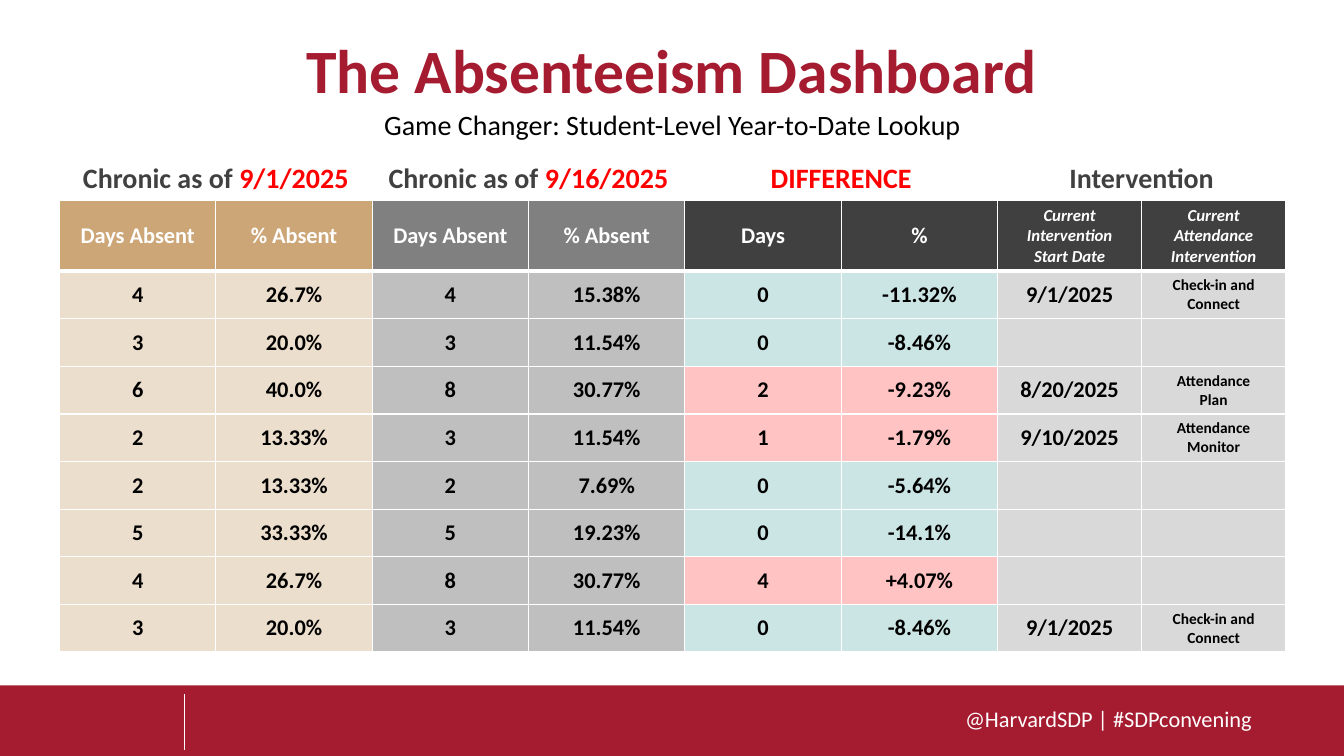
from collections import namedtuple

from lxml.etree import SubElement
from pptx import Presentation
from pptx.dml.color import RGBColor
from pptx.enum.shapes import MSO_CONNECTOR, MSO_SHAPE
from pptx.enum.text import MSO_ANCHOR, MSO_AUTO_SIZE, PP_ALIGN
from pptx.oxml.ns import qn
from pptx.util import Cm, Pt

Box = namedtuple("Box", "left top width height")

CRIMSON, WHITE, BLACK, RED = "A51C30", "FFFFFF", "000000", "FF0000"
CHARCOAL, GREY, SILVER, PALE_GREY = "404040", "808080", "BFBFBF", "D9D9D9"
TAN, CREAM, TEAL, PINK = "CDA678", "ECDECC", "CBE5E4", "FFC3C3"

SLIDE_WIDTH, SLIDE_HEIGHT = 33.87, 19.05
COLUMN_WIDTHS = [3.94] * 6 + [3.63] * 2
HEADER_HEIGHT, ROW_HEIGHT = 1.78, 1.2

GROUP_HEADINGS = [
    [("Chronic as of ", CHARCOAL), ("9/1/2025", RED)],
    [("Chronic as of ", CHARCOAL), ("9/16/2025", RED)],
    [("DIFFERENCE", RED)],
    [("Intervention", CHARCOAL)],
]
HEADERS = [
    "Days Absent", "% Absent", "Days Absent", "% Absent", "Days", "%",
    "Current\nIntervention\nStart Date", "Current Attendance Intervention",
]
HEADER_FILLS = [TAN, GREY, CHARCOAL, CHARCOAL]
STUDENTS = [
    ("4", "26.7%", "4", "15.38%", "0", "-11.32%", "9/1/2025", "Check-in and Connect"),
    ("3", "20.0%", "3", "11.54%", "0", "-8.46%", "", ""),
    ("6", "40.0%", "8", "30.77%", "2", "-9.23%", "8/20/2025", "Attendance\nPlan"),
    ("2", "13.33%", "3", "11.54%", "1", "-1.79%", "9/10/2025", "Attendance Monitor"),
    ("2", "13.33%", "2", "7.69%", "0", "-5.64%", "", ""),
    ("5", "33.33%", "5", "19.23%", "0", "-14.1%", "", ""),
    ("4", "26.7%", "8", "30.77%", "4", "+4.07%", "", ""),
    ("3", "20.0%", "3", "11.54%", "0", "-8.46%", "9/1/2025", "Check-in and Connect"),
]


def color(hex_string):
    return RGBColor.from_string(hex_string)


def place(shape, box):
    shape.left, shape.top, shape.width, shape.height = (Cm(length) for length in box)


def write(frame, text, size=16, fill=BLACK, bold=False, italic=False,
          align=PP_ALIGN.CENTER, spacing=1.0, bullet=True):
    """Fill a frame with a string, one paragraph a line, or a list of (text, colour) spans."""
    lines = [[(line, fill)] for line in text.split("\n")] if isinstance(text, str) else [text]
    for index, spans in enumerate(lines):
        para = frame.add_paragraph() if index else frame.paragraphs[0]
        if not bullet:
            properties = para._p.get_or_add_pPr()
            properties.set("marL", "0")
            properties.set("indent", "0")
            SubElement(properties, qn("a:buNone"))
        para.alignment, para.line_spacing, para.space_before = align, spacing, Pt(0)
        para.font.size = Pt(size)
        for content, span_color in spans:
            if not content:
                continue
            span = para.add_run()
            span.text = content
            font = span.font
            font.name, font.size, font.bold, font.italic = "Calibri", Pt(size), bold, italic
            font.color.rgb = color(span_color)


def add_text(page, box, text, anchor=MSO_ANCHOR.MIDDLE, **text_format):
    frame = page.shapes.add_textbox(*(Cm(length) for length in box)).text_frame
    frame.word_wrap = True
    frame.vertical_anchor = anchor
    write(frame, text, **text_format)
    return frame


def add_heading(page, box):
    title, subtitle = page.shapes.title, page.placeholders[1]
    place(title, Box(box.left, box.top, box.width, 2.31))
    place(subtitle, Box(box.left + 2.34, box.top + 1.98, box.width - 4.66, 1.65))
    for shape, anchor in ((title, MSO_ANCHOR.MIDDLE), (subtitle, MSO_ANCHOR.TOP)):
        shape.text_frame.auto_size = MSO_AUTO_SIZE.NONE
        shape.text_frame.vertical_anchor = anchor
    write(title.text_frame, "The Absenteeism Dashboard",
          size=44, fill=CRIMSON, bold=True, spacing=0.9)
    write(subtitle.text_frame, "Game Changer: Student-Level Year-to-Date Lookup",
          size=20, spacing=0.9, bullet=False)


def add_group_headings(page, box):
    """Centre each heading over its pair of table columns."""
    left = box.left
    for index, spans in enumerate(GROUP_HEADINGS):
        width = sum(COLUMN_WIDTHS[2 * index:2 * index + 2])
        add_text(page, Box(left, box.top, width, box.height), spans,
                 size=20, bold=True, spacing=0.9)
        left += width


def set_borders(cell, top, bottom):
    properties = cell._tc.get_or_add_tcPr()
    for side, points in (("L", 1), ("R", 1), ("T", top), ("B", bottom)):
        line = SubElement(properties, qn(f"a:ln{side}"), w=str(Pt(points)))
        SubElement(SubElement(line, qn("a:solidFill")), qn("a:srgbClr"), val=WHITE)


def format_cell(cell, text, background, top=1, bottom=1, **text_format):
    set_borders(cell, top, bottom)
    cell.fill.solid()
    cell.fill.fore_color.rgb = color(background)
    cell.vertical_anchor = MSO_ANCHOR.MIDDLE
    write(cell.text_frame, text, bold=True, **text_format)


def add_student_table(page, box):
    table = page.shapes.add_table(len(STUDENTS) + 1, len(HEADERS),
                                  *(Cm(length) for length in box)).table
    for column, width in zip(table.columns, COLUMN_WIDTHS):
        column.width = Cm(width)
    for index, row in enumerate(table.rows):
        row.height = Cm(ROW_HEIGHT if index else HEADER_HEIGHT)
    for index, header in enumerate(HEADERS):
        intervention = index >= 6
        format_cell(table.cell(0, index), header, HEADER_FILLS[index // 2], bottom=3,
                    size=12 if intervention else 16, fill=WHITE, italic=intervention)
    for row, student in enumerate(STUDENTS, 1):
        more_days = int(student[4]) > 0
        fills = [CREAM, SILVER, PINK if more_days else TEAL, PALE_GREY]
        for index, value in enumerate(student):
            format_cell(table.cell(row, index), value, fills[index // 2],
                        top=3 if row == 1 else 1, size=11 if index == 7 else 16)


def add_footer(page, box):
    bar = page.shapes.add_shape(MSO_SHAPE.RECTANGLE, *(Cm(length) for length in box))
    bar.shadow.inherit = False
    bar.fill.solid()
    bar.fill.fore_color.rgb = color(CRIMSON)
    bar.line.fill.background()
    frame = add_text(page, Box(box.left + 21.31, box.top + 0.38, 10.24, 0.94),
                     "@HarvardSDP | #SDPconvening", anchor=MSO_ANCHOR.TOP,
                     fill=WHITE, align=PP_ALIGN.RIGHT)
    frame.margin_right = Cm(0)
    divider_left = Cm(box.left + 4.65)
    divider = page.shapes.add_connector(MSO_CONNECTOR.STRAIGHT,
                                        divider_left, Cm(box.top + 0.23),
                                        divider_left, Cm(box.top + 1.63))
    divider.line.color.rgb = color(WHITE)
    divider.line.width = Pt(0.5)
    SubElement(divider._element.spPr, qn("a:effectLst"))


def main():
    deck = Presentation()
    deck.slide_width, deck.slide_height = Cm(SLIDE_WIDTH), Cm(SLIDE_HEIGHT)
    page = deck.slides.add_slide(deck.slide_layouts[1])
    table_width = sum(COLUMN_WIDTHS)
    table_height = HEADER_HEIGHT + ROW_HEIGHT * len(STUDENTS)
    add_footer(page, Box(0, 17.27, SLIDE_WIDTH, SLIDE_HEIGHT - 17.27))
    add_heading(page, Box(0, 0.69, SLIDE_WIDTH, 3.63))
    add_student_table(page, Box(1.5, 5.05, table_width, table_height))
    add_group_headings(page, Box(1.5, 3.73, table_width, 1.6))
    deck.save("out.pptx")


if __name__ == "__main__":
    main()
